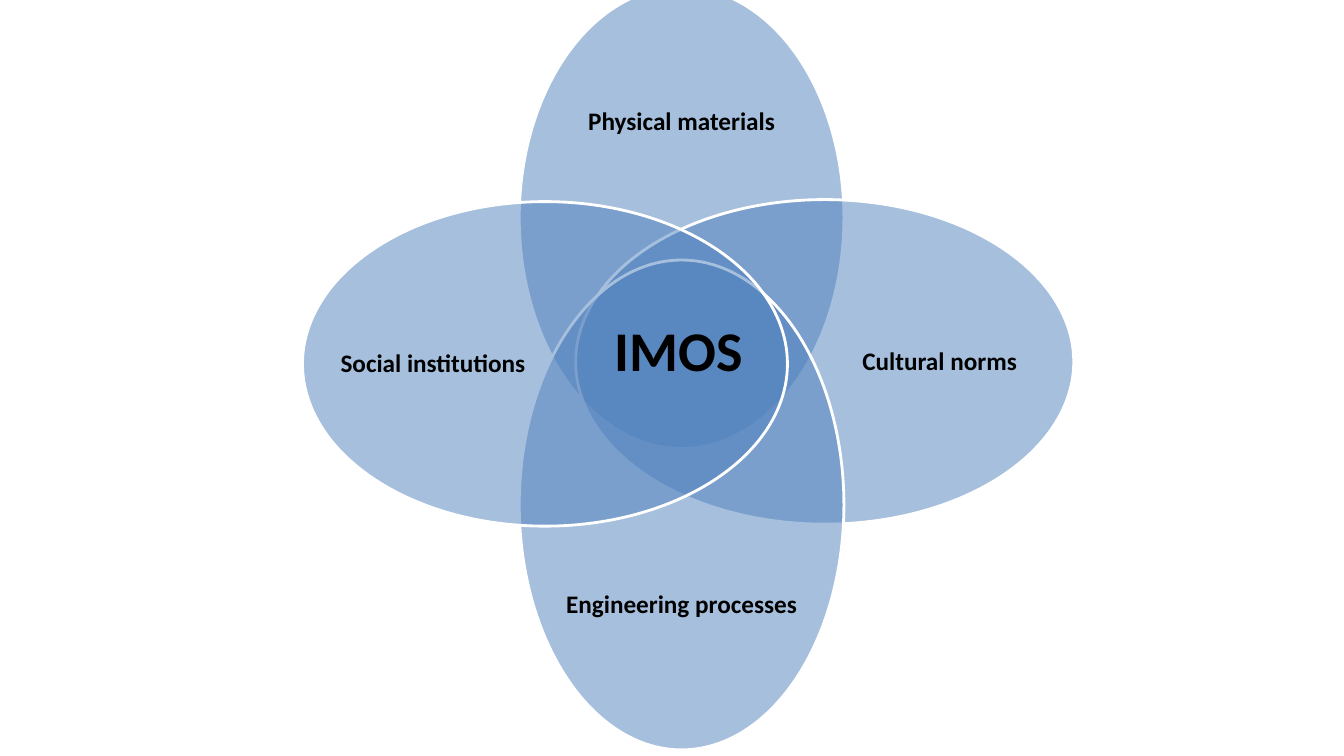
from lxml import etree
from pptx import Presentation
from pptx.dml.color import RGBColor
from pptx.enum.shapes import MSO_SHAPE as Preset
from pptx.enum.text import MSO_ANCHOR as Anchor, MSO_AUTO_SIZE as AutoSize, PP_ALIGN as Align
from pptx.oxml.ns import qn
from pptx.util import Inches, Pt

PETAL_BLUE = RGBColor(0x4F, 0x81, 0xBD)
WHITE = RGBColor(0xFF, 0xFF, 0xFF)
BLACK = RGBColor(0x00, 0x00, 0x00)
FONT = "Calibri"

PETALS = [
    ("Physical materials", (5.15, -0.13, 3.22, 4.58), (5.52, 0.49, 2.48, 1.45)),
    ("Cultural norms", (5.71, 1.98, 4.94, 3.22), (8.37, 2.35, 1.9, 2.48)),
    ("Engineering processes", (5.15, 2.58, 3.22, 4.86), (5.52, 5.24, 2.48, 1.54)),
    ("Social institutions", (3, 2, 4.81, 3.22), (3.37, 2.37, 1.85, 2.48)),
]


def add_petal(slide, bounds):
    petal = slide.shapes.add_shape(Preset.OVAL, *map(Inches, bounds))
    petal.shadow.inherit = False
    petal.fill.solid()
    petal.fill.fore_color.rgb = PETAL_BLUE
    color = petal.fill._xPr.find(qn("a:solidFill"))[0]
    etree.SubElement(color, qn("a:alpha")).set("val", "50000")
    petal.line.color.rgb = WHITE
    petal.line.width = Pt(2)


def add_label(slide, text, bounds, size):
    frame = slide.shapes.add_textbox(*map(Inches, bounds)).text_frame
    frame.word_wrap = True
    paragraph = frame.paragraphs[0]
    paragraph.text = text
    paragraph.font.name = FONT
    paragraph.font.size = Pt(size)
    paragraph.font.bold = True
    paragraph.font.color.rgb = BLACK
    return frame


def add_petal_label(slide, text, bounds):
    frame = add_label(slide, text, bounds, 18)
    frame.margin_left = frame.margin_right = Inches(0)
    frame.margin_top = frame.margin_bottom = Inches(0)
    frame.vertical_anchor = Anchor.MIDDLE
    frame.paragraphs[0].alignment = Align.CENTER
    frame.paragraphs[0].line_spacing = 0.9


def main():
    deck = Presentation()
    deck.slide_width = Inches(13.33)
    deck.slide_height = Inches(7.5)
    slide = deck.slides.add_slide(deck.slide_layouts[6])
    for name, petal_bounds, label_bounds in PETALS:
        add_petal(slide, petal_bounds)
        add_petal_label(slide, name, label_bounds)
    core = add_label(slide, "IMOS", (6, 3.08, 1.58, 0.77), 40)
    core.auto_size = AutoSize.SHAPE_TO_FIT_TEXT
    deck.save("out.pptx")


if __name__ == "__main__":
    main()
